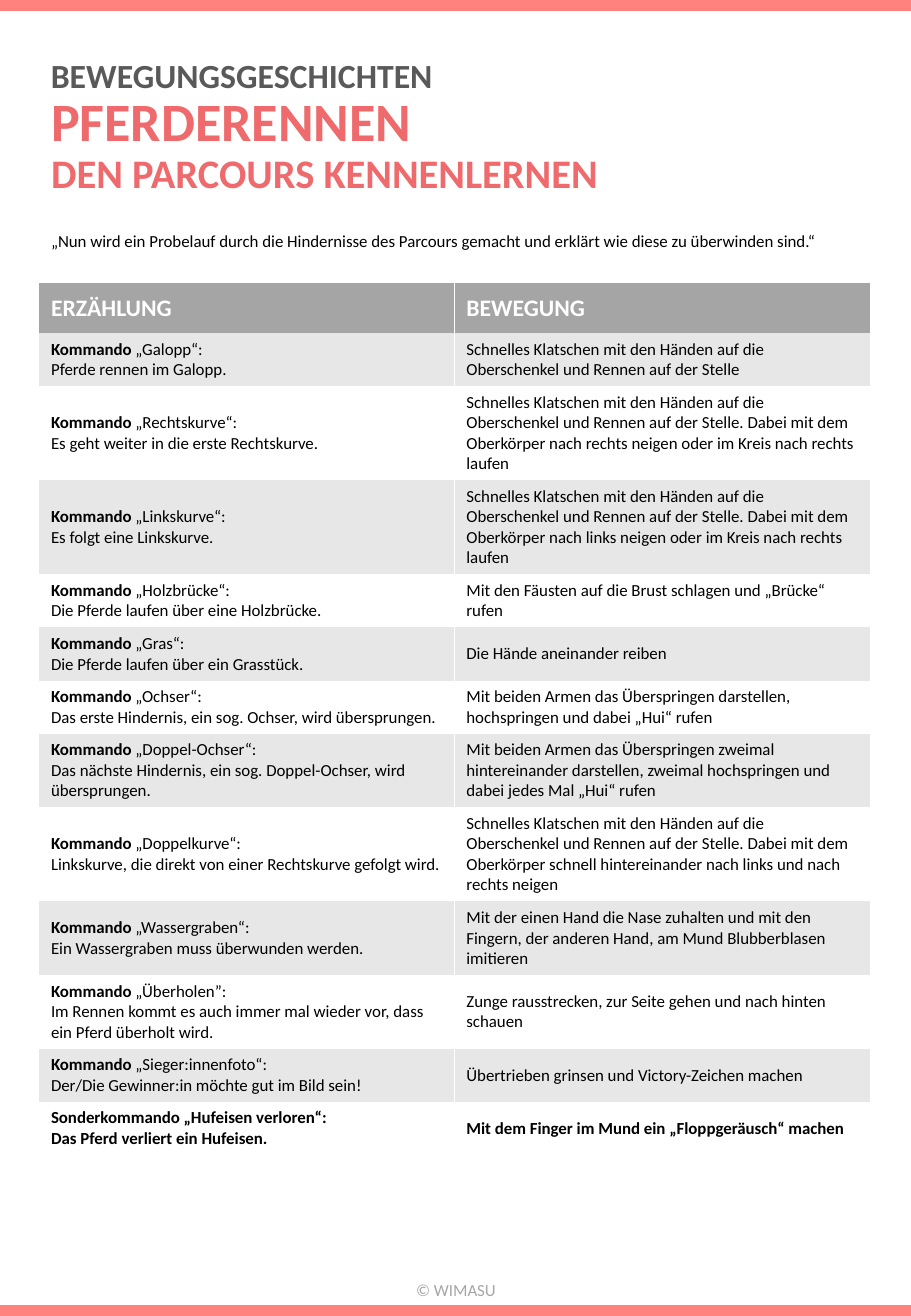
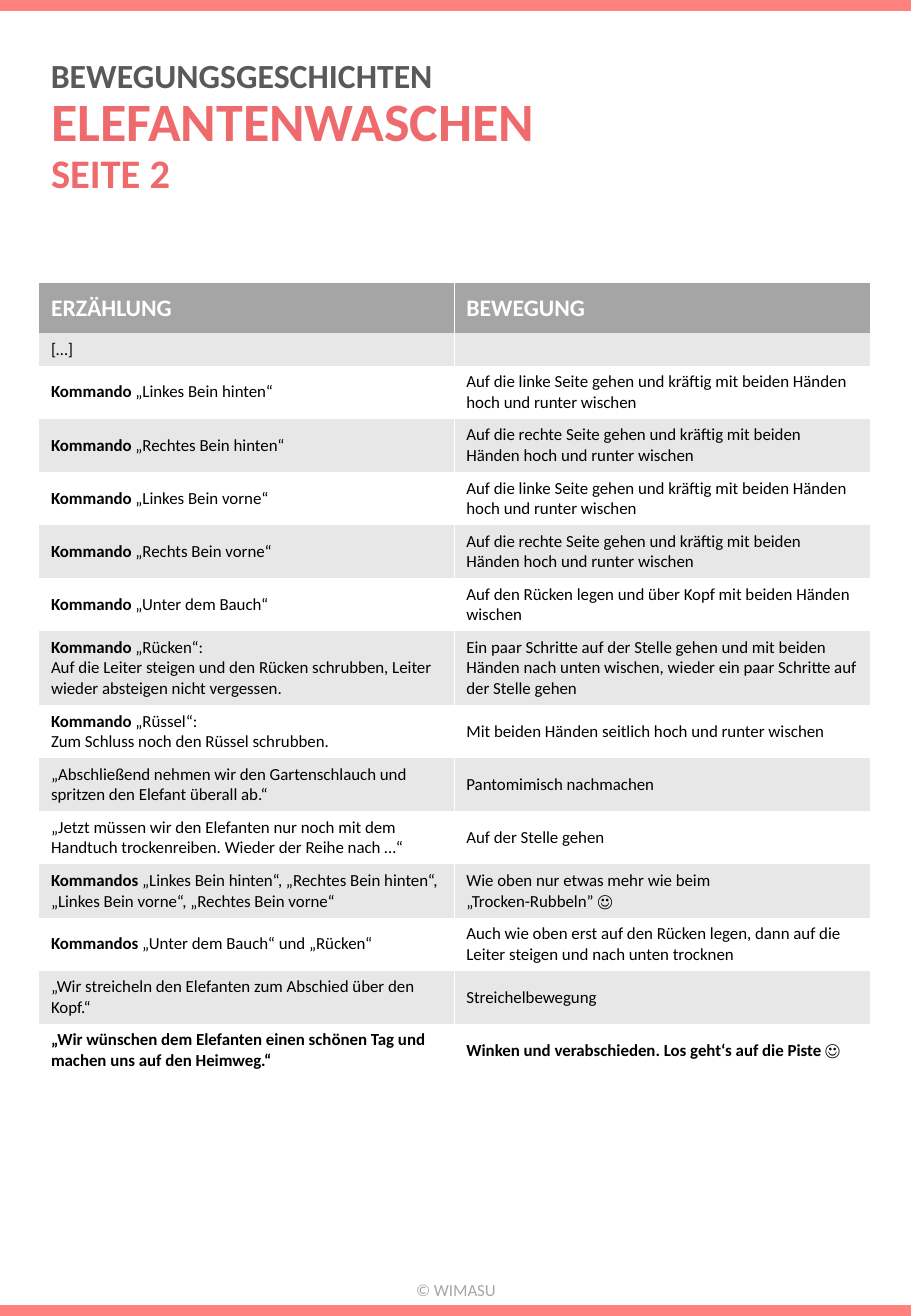
import pptx
import pptx.util
import pptx.dml.color
import pptx.enum.shapes
import pptx.enum.text
import pptx.oxml.ns
import lxml.etree

Inches, Pt, qn = pptx.util.Inches, pptx.util.Pt, pptx.oxml.ns.qn
ALIGN = pptx.enum.text.PP_ALIGN
ANCHOR = pptx.enum.text.MSO_ANCHOR
AUTO_SIZE = pptx.enum.text.MSO_AUTO_SIZE

WIDTH, HEIGHT = 7.5, 10.83
MARGIN, CONTENT_WIDTH = 0.32, 6.84
BAND_HEIGHT = 0.09
CORAL, ROSE, DARK, BLACK, WHITE = "FF827E", "EE6A6C", "595959", "000000", "FFFFFF"
FOOTER_GREY, HEADER_GREY, STRIPE_GREY = "A6A6A6", "A5A5A5", "E7E7E7"
PLAIN_TABLE = "{2D5ABB26-0587-4C30-8999-92F81FD0307C}"

SERIES = "BEWEGUNGSGESCHICHTEN"
COPYRIGHT = "© WIMASU"
COLUMNS = ("ERZÄHLUNG", "", "BEWEGUNG")
CLAP = "Schnelles Klatschen mit den Händen auf die Oberschenkel und Rennen auf der Stelle"
CURVE = CLAP + ". Dabei mit dem Oberkörper nach {} neigen oder im Kreis nach rechts laufen"
WIPE = "Auf die {} Seite gehen und kräftig mit beiden Händen hoch und runter wischen"

PAGES = [
    {
        "title": "PFERDERENNEN",
        "subtitle": "DEN PARCOURS KENNENLERNEN",
        "title_width": 6.27,
        "intro": "„Nun wird ein Probelauf durch die Hindernisse des Parcours gemacht "
                 "und erklärt wie diese zu überwinden sind.“",
        "row_height": 0.41,
        "table_height": 7.11,
        "rows": [
            ("Kommando", " „Galopp“:\nPferde rennen im Galopp.", CLAP),
            ("Kommando", " „Rechtskurve“:\nEs geht weiter in die erste Rechtskurve.",
             CURVE.format("rechts")),
            ("Kommando", " „Linkskurve“:\nEs folgt eine Linkskurve.", CURVE.format("links")),
            ("Kommando", " „Holzbrücke“:\nDie Pferde laufen über eine Holzbrücke.",
             "Mit den Fäusten auf die Brust schlagen und „Brücke“ rufen"),
            ("Kommando", " „Gras“:\nDie Pferde laufen über ein Grasstück.",
             "Die Hände aneinander reiben"),
            ("Kommando", " „Ochser“:\nDas erste Hindernis, ein sog. Ochser, wird übersprungen.",
             "Mit beiden Armen das Überspringen darstellen, hochspringen und dabei „Hui“ rufen"),
            ("Kommando", " „Doppel-Ochser“:\nDas nächste Hindernis, ein sog. Doppel-Ochser, "
             "wird übersprungen.",
             "Mit beiden Armen das Überspringen zweimal hintereinander darstellen, "
             "zweimal hochspringen und dabei jedes Mal „Hui“ rufen"),
            ("Kommando", " „Doppelkurve“:\nLinkskurve, die direkt von einer Rechtskurve "
             "gefolgt wird.",
             CLAP + ". Dabei mit dem Oberkörper schnell hintereinander nach links und "
             "nach rechts neigen"),
            ("Kommando", " „Wassergraben“:\nEin Wassergraben muss überwunden werden.",
             "Mit der einen Hand die Nase zuhalten und mit den Fingern, der anderen Hand, "
             "am Mund Blubberblasen imitieren"),
            ("Kommando", " „Überholen”:\nIm Rennen kommt es auch immer mal wieder vor, "
             "dass ein Pferd überholt wird.",
             "Zunge rausstrecken, zur Seite gehen und nach hinten schauen"),
            ("Kommando", " „Sieger:innenfoto“:\nDer/Die Gewinner:in möchte gut im Bild sein!",
             "Übertrieben grinsen und Victory-Zeichen machen"),
            ("Sonderkommando", " „Hufeisen verloren“:\nDas Pferd verliert ein Hufeisen.",
             "Mit dem Finger im Mund ein „Floppgeräusch“ machen"),
        ],
    },
    {
        "title": "ELEFANTENWASCHEN",
        "subtitle": "SEITE 2",
        "title_width": 5.17,
        "intro": "",
        "row_height": 0.24,
        "table_height": 6.47,
        "rows": [
            ("", "[…]", ""),
            ("Kommando", " „Linkes Bein hinten“", WIPE.format("linke")),
            ("Kommando", " „Rechtes Bein hinten“", WIPE.format("rechte")),
            ("Kommando", " „Linkes Bein vorne“", WIPE.format("linke")),
            ("Kommando", " „Rechts Bein vorne“", WIPE.format("rechte")),
            ("Kommando", " „Unter dem Bauch“",
             "Auf den Rücken legen und über Kopf mit beiden Händen wischen"),
            ("Kommando", " „Rücken“:\nAuf die Leiter steigen und den Rücken schrubben, "
             "Leiter wieder absteigen nicht vergessen.",
             "Ein paar Schritte auf der Stelle gehen und mit beiden Händen nach unten wischen, "
             "wieder ein paar Schritte auf der Stelle gehen"),
            ("Kommando", " „Rüssel“:\nZum Schluss noch den Rüssel schrubben.",
             "Mit beiden Händen seitlich hoch und runter wischen"),
            ("", "„Abschließend nehmen wir den Gartenschlauch und spritzen den Elefant "
             "überall ab.“", "Pantomimisch nachmachen"),
            ("", "„Jetzt müssen wir den Elefanten nur noch mit dem Handtuch trockenreiben. "
             "Wieder der Reihe nach …“", "Auf der Stelle gehen"),
            ("Kommandos", " „Linkes Bein hinten“, „Rechtes Bein hinten“, "
             "„Linkes Bein vorne“, „Rechtes Bein vorne“",
             "Wie oben nur etwas mehr wie beim\n„Trocken-Rubbeln” ☺"),
            ("Kommandos", " „Unter dem Bauch“ und „Rücken“",
             "Auch wie oben erst auf den Rücken legen, dann auf die Leiter steigen "
             "und nach unten trocknen"),
            ("", "„Wir streicheln den Elefanten zum Abschied über den Kopf.“",
             "Streichelbewegung"),
            ("", "„Wir wünschen dem Elefanten einen schönen Tag und machen uns auf den Heimweg.“",
             "Winken und verabschieden. Los geht‘s auf die Piste ☺"),
        ],
    },
]


def rgb(value):
    return pptx.dml.color.RGBColor.from_string(value)


def apply(target, **values):
    for name, value in values.items():
        setattr(target, name, value)


def place(shape, left, top, width, height):
    apply(shape, left=Inches(left), top=Inches(top), width=Inches(width), height=Inches(height))


def write(paragraph, text, size, colour, bold=False):
    for number, line in enumerate(text.split("\n")):
        if number:
            paragraph.add_line_break()
            lxml.etree.SubElement(paragraph._p[-1], qn("a:rPr"), sz=str(size * 100))
        if line:
            run = paragraph.add_run()
            run.text = line
            apply(run.font, name="Calibri", size=Pt(size), bold=bold)
            run.font.color.rgb = rgb(colour)


def build_layout(layout, slide):
    for placeholder in list(layout.placeholders):
        if placeholder.placeholder_format.idx > 1:
            placeholder.element.getparent().remove(placeholder.element)
    for style in layout.placeholders[0].element.iter(qn("a:defRPr")):
        style.set("sz", "3200")

    shared = []
    for top in (0, HEIGHT - BAND_HEIGHT):
        band = slide.shapes.add_shape(
            pptx.enum.shapes.MSO_SHAPE.RECTANGLE,
            0, Inches(top), Inches(WIDTH), Inches(BAND_HEIGHT))
        band.shadow.inherit = False
        band.fill.solid()
        band.fill.fore_color.rgb = rgb(CORAL)
        band.line.fill.background()
        shared.append(band)

    footer = slide.shapes.add_textbox(Inches(3.32), Inches(10.48), Inches(0.86), Inches(0.27))
    apply(footer.text_frame, word_wrap=False, auto_size=AUTO_SIZE.SHAPE_TO_FIT_TEXT)
    footer.text_frame.paragraphs[0].alignment = ALIGN.RIGHT
    write(footer.text_frame.paragraphs[0], COPYRIGHT, 10, FOOTER_GREY)

    series = slide.shapes.add_textbox(Inches(MARGIN), Inches(0.47), Inches(5.77), Inches(0.37))
    apply(series.text_frame, word_wrap=True, vertical_anchor=ANCHOR.BOTTOM)
    series.text_frame.paragraphs[0].line_spacing = 0.9
    write(series.text_frame.paragraphs[0], SERIES, 20, DARK, True)

    for shape in shared + [footer, series]:
        layout.shapes.element.append(shape.element)


def fill_cell(cell, border, fill, runs, size, colour):
    line = lxml.etree.SubElement(cell._tc.get_or_add_tcPr(), qn(border), w=str(Pt(1)))
    solid = lxml.etree.SubElement(line, qn("a:solidFill"))
    lxml.etree.SubElement(solid, qn("a:srgbClr"), val=WHITE)
    cell.fill.solid()
    cell.fill.fore_color.rgb = rgb(fill)
    cell.vertical_anchor = ANCHOR.MIDDLE
    paragraph = cell.text_frame.paragraphs[0]
    for text, bold in runs:
        write(paragraph, text, size, colour, bold)
    if not paragraph.runs:
        lxml.etree.SubElement(paragraph._p, qn("a:endParaRPr"), sz=str(size * 100))


def add_story_table(slide, page):
    rows = [COLUMNS] + page["rows"]
    frame = slide.shapes.add_table(
        len(rows), 2, Inches(MARGIN), Inches(2.33),
        Inches(CONTENT_WIDTH), Inches(page["table_height"]))
    table = frame.table
    table.horz_banding = False
    frame.element.find(".//" + qn("a:tableStyleId")).text = PLAIN_TABLE
    for index, (command, story, movement) in enumerate(rows):
        header = index == 0
        strong = header or index == len(rows) - 1
        table.rows[index].height = Inches(0.41 if header else page["row_height"])
        fill = HEADER_GREY if header else (STRIPE_GREY if index % 2 else WHITE)
        look = (14, WHITE) if header else (10, BLACK)
        fill_cell(table.cell(index, 0), "a:lnR", fill, [(command, True), (story, strong)], *look)
        fill_cell(table.cell(index, 1), "a:lnL", fill, [(movement, strong)], *look)
    frame.height = Inches(page["table_height"])


def fill_page(slide, page):
    title, intro = slide.placeholders
    place(title, MARGIN, 0.73, page["title_width"], 1.04)
    apply(title.text_frame, vertical_anchor=ANCHOR.TOP, auto_size=AUTO_SIZE.NONE)
    heading = title.text_frame.paragraphs[0]
    apply(heading, line_spacing=0.9, alignment=ALIGN.LEFT)
    write(heading, page["title"] + "\n", 32, ROSE, True)
    write(heading, page["subtitle"], 24, ROSE, True)

    if page["intro"]:
        place(intro, MARGIN, 1.85, CONTENT_WIDTH, 0.4)
        apply(intro.text_frame, vertical_anchor=ANCHOR.TOP, auto_size=AUTO_SIZE.NONE)
        apply(intro.text_frame.paragraphs[0], alignment=ALIGN.JUSTIFY, space_before=Pt(0))
        write(intro.text_frame.paragraphs[0], page["intro"], 10, BLACK)
    else:
        intro.element.getparent().remove(intro.element)
    add_story_table(slide, page)


def main():
    deck = pptx.Presentation()
    apply(deck, slide_width=Inches(WIDTH), slide_height=Inches(HEIGHT))
    layout = deck.slide_layouts[2]
    slides = [deck.slides.add_slide(layout) for page in PAGES]
    build_layout(layout, slides[0])
    for slide, page in zip(slides, PAGES):
        fill_page(slide, page)
    deck.save("out.pptx")


if __name__ == "__main__":
    main()
